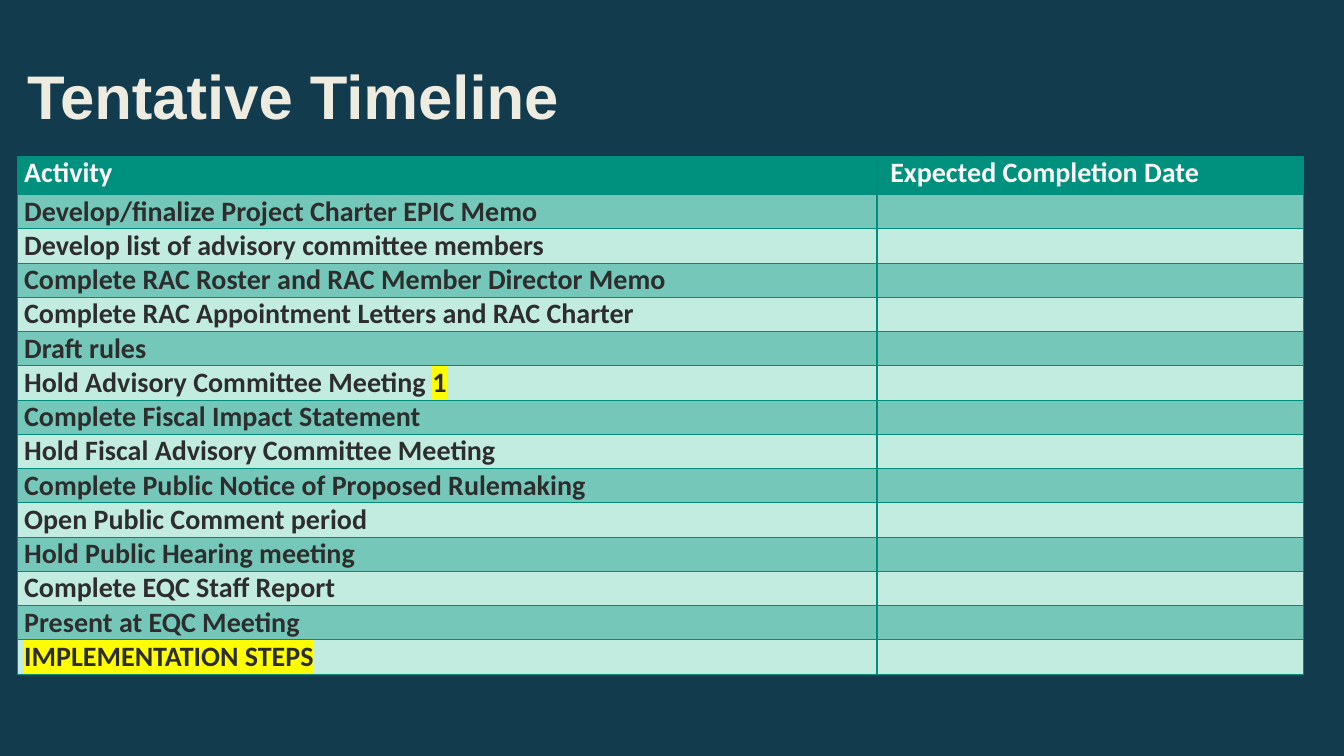
from dataclasses import dataclass

from lxml.etree import SubElement
from pptx import Presentation
from pptx.dml.color import RGBColor as Rgb
from pptx.enum.text import MSO_ANCHOR as Anchor
from pptx.oxml.ns import qn
from pptx.slide import Slide
from pptx.table import _Cell as Cell
from pptx.text.text import TextFrame
from pptx.util import Inches, Pt


@dataclass(frozen=True)
class Theme:
    """Colours, fonts and type sizes of the slide."""
    background: str = "123B4D"
    title: str = "EEECE1"
    header: str = "00907E"
    header_text: str = "FFFFFF"
    body_text: str = "2D2D2D"
    bands: tuple[str, str] = ("75C8B9", "C3ECE0")
    rule: str = "008D7B"
    highlight: str = "FFFF00"
    title_font: str = "Arial"
    table_font: str = "Calibri"
    title_size: int = 44
    table_size: int = 20


@dataclass(frozen=True)
class Activity:
    """A timeline step, with an optional highlighted ending."""
    text: str
    marked: str = ""


THEME = Theme()
ACTIVITIES = [
    Activity("Develop/finalize Project Charter EPIC Memo"),
    Activity("Develop list of advisory committee members"),
    Activity("Complete RAC Roster and RAC Member Director Memo"),
    Activity("Complete RAC Appointment Letters and RAC Charter"),
    Activity("Draft rules"),
    Activity("Hold Advisory Committee Meeting ", "1"),
    Activity("Complete Fiscal Impact Statement"),
    Activity("Hold Fiscal Advisory Committee Meeting"),
    Activity("Complete Public Notice of Proposed Rulemaking"),
    Activity("Open Public Comment period"),
    Activity("Hold Public Hearing meeting"),
    Activity("Complete EQC Staff Report"),
    Activity("Present at EQC Meeting"),
    Activity("", "IMPLEMENTATION STEPS"),
]
COLUMN_WIDTHS = (8.53, 4.23)
HEADER_HEIGHT, ROW_HEIGHT = 0.38, 0.34


def add_text(frame: TextFrame, text: str, *, color: str,
             font: str = THEME.table_font, size: int = THEME.table_size,
             highlight: str = "") -> None:
    """Append a bold run to the first paragraph."""
    run = frame.paragraphs[0].add_run()
    run.text = text
    run.font.bold = True
    run.font.size = Pt(size)
    run.font.color.rgb = Rgb.from_string(color)
    if highlight:
        mark = SubElement(run.font._element, qn("a:highlight"))
        SubElement(mark, qn("a:srgbClr"), val=highlight)
    run.font.name = font


def format_cell(cell: Cell, fill: str, left: float, right: float,
                indent: float = 0.07) -> None:
    """Set the margins, borders and fill of a cell."""
    cell.margin_left, cell.margin_right = Inches(indent), Inches(0.07)
    cell.margin_top = cell.margin_bottom = 0
    properties = cell._tc.get_or_add_tcPr()
    for side, width in zip("LRTB", (left, right, 0.75, 0.75)):
        line = SubElement(properties, qn(f"a:ln{side}"), w=str(Pt(width)))
        paint = SubElement(line, qn("a:solidFill"))
        SubElement(paint, qn("a:srgbClr"), val=THEME.rule)
    cell.fill.solid()
    cell.fill.fore_color.rgb = Rgb.from_string(fill)


def add_title(slide: Slide) -> None:
    """Place the slide title."""
    title = slide.shapes.add_textbox(Inches(0.17), Inches(0.33),
                                     Inches(13), Inches(1.22)).text_frame
    title.word_wrap = True
    title.vertical_anchor = Anchor.MIDDLE
    add_text(title, "Tentative Timeline", color=THEME.title,
             font=THEME.title_font, size=THEME.title_size)


def add_timeline(slide: Slide) -> None:
    """Build the table of activities and completion dates."""
    height = HEADER_HEIGHT + ROW_HEIGHT * len(ACTIVITIES)
    timeline = slide.shapes.add_table(
        len(ACTIVITIES) + 1, 2, Inches(0.17), Inches(1.55),
        Inches(sum(COLUMN_WIDTHS)), Inches(height)).table
    timeline.horz_banding = False
    for column, width in zip(timeline.columns, COLUMN_WIDTHS):
        column.width = Inches(width)

    for index, row in enumerate(timeline.rows):
        row.height = Inches(ROW_HEIGHT if index else HEADER_HEIGHT)
        fill = THEME.bands[(index - 1) % 2] if index else THEME.header
        activity, date = row.cells
        format_cell(activity, fill, 0.75, 2)
        format_cell(date, fill, 2, 0.75, indent=0.13)

    headings = ("Activity", "Expected Completion Date")
    for column, heading in enumerate(headings):
        add_text(timeline.cell(0, column).text_frame, heading,
                 color=THEME.header_text)
    for index, step in enumerate(ACTIVITIES, start=1):
        frame = timeline.cell(index, 0).text_frame
        for text, highlight in ((step.text, ""), (step.marked, THEME.highlight)):
            if text:
                add_text(frame, text, color=THEME.body_text, highlight=highlight)


def main() -> None:
    """Create and save the timeline slide."""
    deck = Presentation()
    deck.slide_width, deck.slide_height = Inches(13.33), Inches(7.5)
    slide = deck.slides.add_slide(deck.slide_layouts[6])
    slide.background.fill.solid()
    slide.background.fill.fore_color.rgb = Rgb.from_string(THEME.background)
    add_title(slide)
    add_timeline(slide)
    deck.save("out.pptx")


if __name__ == "__main__":
    main()
